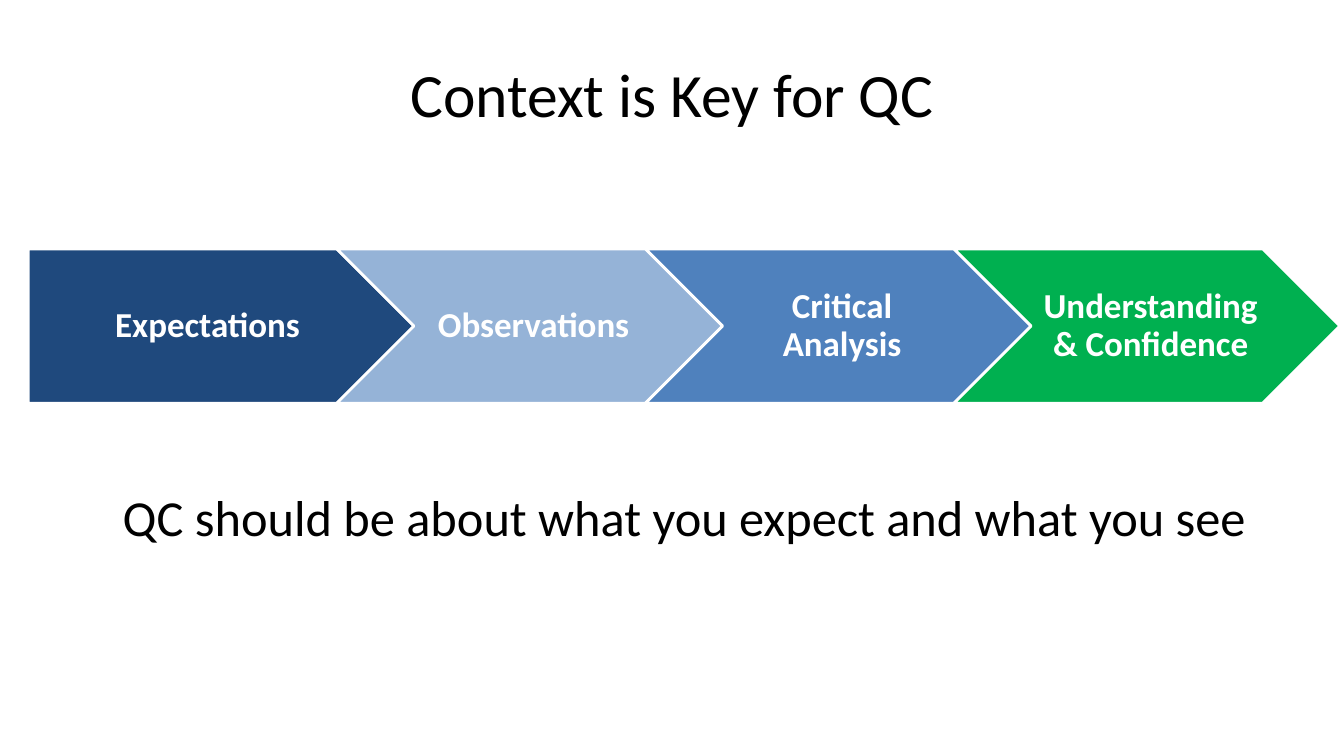
from pptx import Presentation
from pptx.dml.color import RGBColor
from pptx.enum.shapes import MSO_SHAPE
from pptx.enum.text import MSO_ANCHOR, PP_ALIGN
from pptx.util import Pt

BLACK = RGBColor(0x00, 0x00, 0x00)
WHITE = RGBColor(0xFF, 0xFF, 0xFF)
NAVY = RGBColor(0x1F, 0x49, 0x7D)
PALE_BLUE = RGBColor(0x95, 0xB3, 0xD7)
BLUE = RGBColor(0x4F, 0x81, 0xBD)
GREEN = RGBColor(0x00, 0xB0, 0x50)

STAGES = [
    ("Expectations", NAVY),
    ("Observations", PALE_BLUE),
    ("Critical Analysis", BLUE),
    ("Understanding & Confidence", GREEN),
]
FIRST_LEFT, STAGE_TOP = 20.2, 177.8
STAGE_WIDTH, STAGE_HEIGHT = 275.6, 110.2
STAGE_STEP = 220.4


class SlideBuilder:
    font_name = "Calibri"

    def __init__(self, slide):
        self.slide = slide

    def fill_frame(self, frame, wording, anchor, size, color, bold=False, line_spacing=1.0):
        frame.word_wrap = True
        frame.vertical_anchor = anchor
        paragraph = frame.paragraphs[0]
        paragraph.alignment = PP_ALIGN.CENTER
        paragraph.line_spacing = line_spacing
        run = paragraph.add_run()
        run.text = wording
        formats = {"name": self.font_name, "size": Pt(size), "bold": bold}
        for attribute, value in formats.items():
            setattr(run.font, attribute, value)
        run.font.color.rgb = color

    def text(self, wording, left, top, width, height, size, anchor):
        box = self.slide.shapes.add_textbox(Pt(left), Pt(top), Pt(width), Pt(height))
        self.fill_frame(box.text_frame, wording, anchor, size, BLACK)

    def stage(self, wording, preset, left, fill, left_inset):
        arrow = self.slide.shapes.add_shape(
            preset, Pt(left), Pt(STAGE_TOP), Pt(STAGE_WIDTH), Pt(STAGE_HEIGHT))
        arrow.shadow.inherit = False
        arrow.fill.solid()
        arrow.fill.fore_color.rgb = fill
        arrow.line.color.rgb = WHITE
        arrow.line.width = Pt(2)
        insets = {"margin_left": left_inset, "margin_top": 5,
                  "margin_right": 2.6, "margin_bottom": 5}
        for attribute, value in insets.items():
            setattr(arrow.text_frame, attribute, Pt(value))
        self.fill_frame(arrow.text_frame, wording, MSO_ANCHOR.MIDDLE, 25, WHITE,
                        bold=True, line_spacing=0.9)


def main():
    deck = Presentation()
    deck.slide_width, deck.slide_height = Pt(960), Pt(540)
    builder = SlideBuilder(deck.slides.add_slide(deck.slide_layouts[6]))

    builder.text("Context is Key for QC", 48, 21.6, 864, 90, 44, MSO_ANCHOR.MIDDLE)
    builder.text("QC should be about what you expect and what you see",
                 57, 343.4, 864, 57, 36, MSO_ANCHOR.TOP)

    for index, (wording, fill) in enumerate(STAGES):
        preset, left_inset = (MSO_SHAPE.CHEVRON, 8) if index else (MSO_SHAPE.PENTAGON, 10.6)
        builder.stage(wording, preset, FIRST_LEFT + index * STAGE_STEP, fill, left_inset)

    deck.save("out.pptx")


if __name__ == "__main__":
    main()
